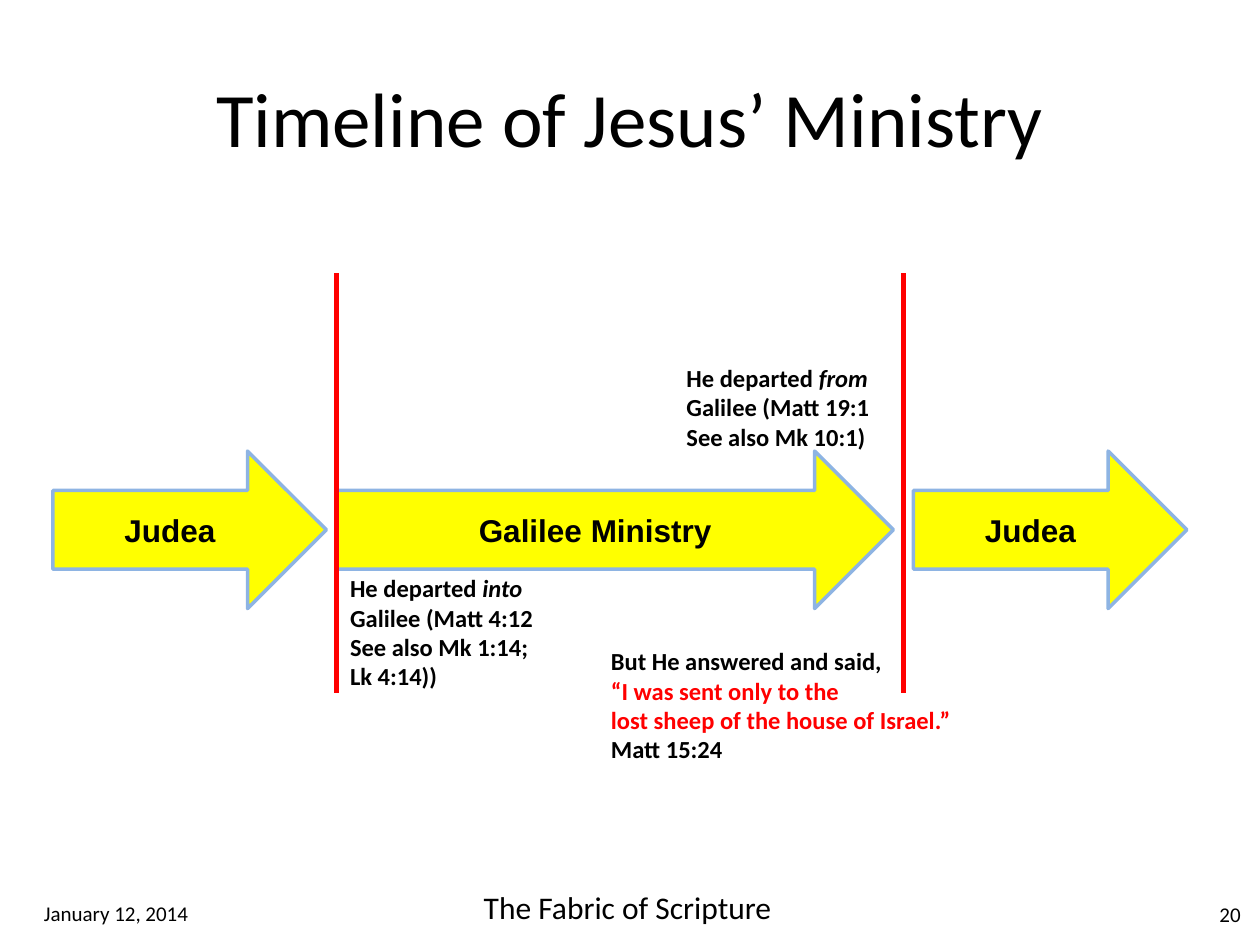
"""Build a timeline slide with three region arrows, two dividers and scripture notes."""
from dataclasses import dataclass

from lxml import etree
from pptx import Presentation
from pptx.dml.color import RGBColor
from pptx.enum import shapes, text
from pptx.oxml import ns
from pptx.util import Inches, Pt


@dataclass(frozen=True)
class Theme:
    black: RGBColor = RGBColor(0, 0, 0)
    red: RGBColor = RGBColor(255, 0, 0)
    yellow: RGBColor = RGBColor(255, 255, 0)
    blue: RGBColor = RGBColor(0x8E, 0xB4, 0xE3)
    body_font: str = "Calibri"
    arrow_font: str = "Arial"
    title_size: int = 44
    label_size: int = 18
    note_size: int = 14
    small_size: int = 12


theme = Theme()


def style(span, size, font=theme.body_font, color=theme.black, bold=False, italic=False):
    span.font.size = Pt(size)
    span.font.name = font
    span.font.color.rgb = color
    span.font.bold = bold
    span.font.italic = italic


def add_text(page, left, top, width, height, lines, size, bold=False):
    box = page.shapes.add_textbox(Inches(left), Inches(top), Inches(width), Inches(height))
    frame = box.text_frame
    frame.word_wrap = False
    frame.auto_size = text.MSO_AUTO_SIZE.SHAPE_TO_FIT_TEXT
    for index, line in enumerate(lines):
        para = frame.paragraphs[0] if index == 0 else frame.add_paragraph()
        for words, look in line:
            span = para.add_run()
            span.text = words
            style(span, size, bold=bold, **look)


deck = Presentation()
deck.slide_width = Inches(10)
deck.slide_height = Inches(7.5)
page = deck.slides.add_slide(deck.slide_layouts[5])

footers = [
    (9.58, 7.11, 0.4, 0.3, "20", theme.small_size),
    (0.25, 7.1, 1.36, 0.3, "January 12, 2014", theme.small_size),
    (3.74, 7, 2.51, 0.4, "The Fabric of Scripture", theme.label_size),
]
for left, top, width, height, words, size in footers:
    add_text(page, left, top, width, height, [[(words, {})]], size)

title = page.shapes.title
title.left, title.top = Inches(0.5), Inches(0.3)
title.width, title.height = Inches(9), Inches(1.25)
title.text_frame.text = "Timeline of Jesus’ Ministry"
title.text_frame.vertical_anchor = text.MSO_ANCHOR.MIDDLE
title.text_frame.paragraphs[0].alignment = text.PP_ALIGN.CENTER
style(title.text_frame.paragraphs[0].runs[0], theme.title_size)

for left, width, region in [(0.42, 2.17, "Judea"), (2.67, 4.42, "Galilee Ministry"), (7.25, 2.17, "Judea")]:
    arrow = page.shapes.add_shape(
        shapes.MSO_SHAPE.RIGHT_ARROW, Inches(left), Inches(3.58), Inches(width), Inches(1.25)
    )
    arrow.shadow.inherit = False
    arrow.fill.solid()
    arrow.fill.fore_color.rgb = theme.yellow
    arrow.line.color.rgb = theme.blue
    arrow.line.width = Pt(2)
    arrow.text_frame.text = region
    arrow.text_frame.vertical_anchor = text.MSO_ANCHOR.MIDDLE
    para = arrow.text_frame.paragraphs[0]
    para.alignment = text.PP_ALIGN.CENTER
    style(para.runs[0], theme.label_size, font=theme.arrow_font, bold=True)

for x in (2.67, 7.17):
    divider = page.shapes.add_connector(
        shapes.MSO_CONNECTOR.STRAIGHT, Inches(x), Inches(2.17), Inches(x), Inches(5.5)
    )
    divider.line.color.rgb = theme.red
    divider.line.width = Pt(3)
    etree.SubElement(divider._element.spPr, ns.qn("a:effectLst"))

italic = {"italic": True}
red = {"color": theme.red}
notes = [
    (2.68, 4.5, 1.67, 1.04, [
        [("He departed ", {}), ("into", italic)],
        [("Galilee (Matt 4:12", {})],
        [("See also Mk 1:14;", {})],
        [("Lk 4:14))", {})],
    ]),
    (5.35, 2.83, 1.67, 0.81, [
        [("He departed ", {}), ("from", italic)],
        [("Galilee (Matt 19:1", {})],
        [("See also Mk 10:1)", {})],
    ]),
    (4.75, 5.08, 2.91, 1.04, [
        [("But He answered and said,", {})],
        [("“I was sent only to the", red)],
        [("lost sheep of the house of Israel.”", red)],
        [("Matt 15:24", {})],
    ]),
]
for left, top, width, height, lines in notes:
    add_text(page, left, top, width, height, lines, theme.note_size, bold=True)

deck.save("out.pptx")
